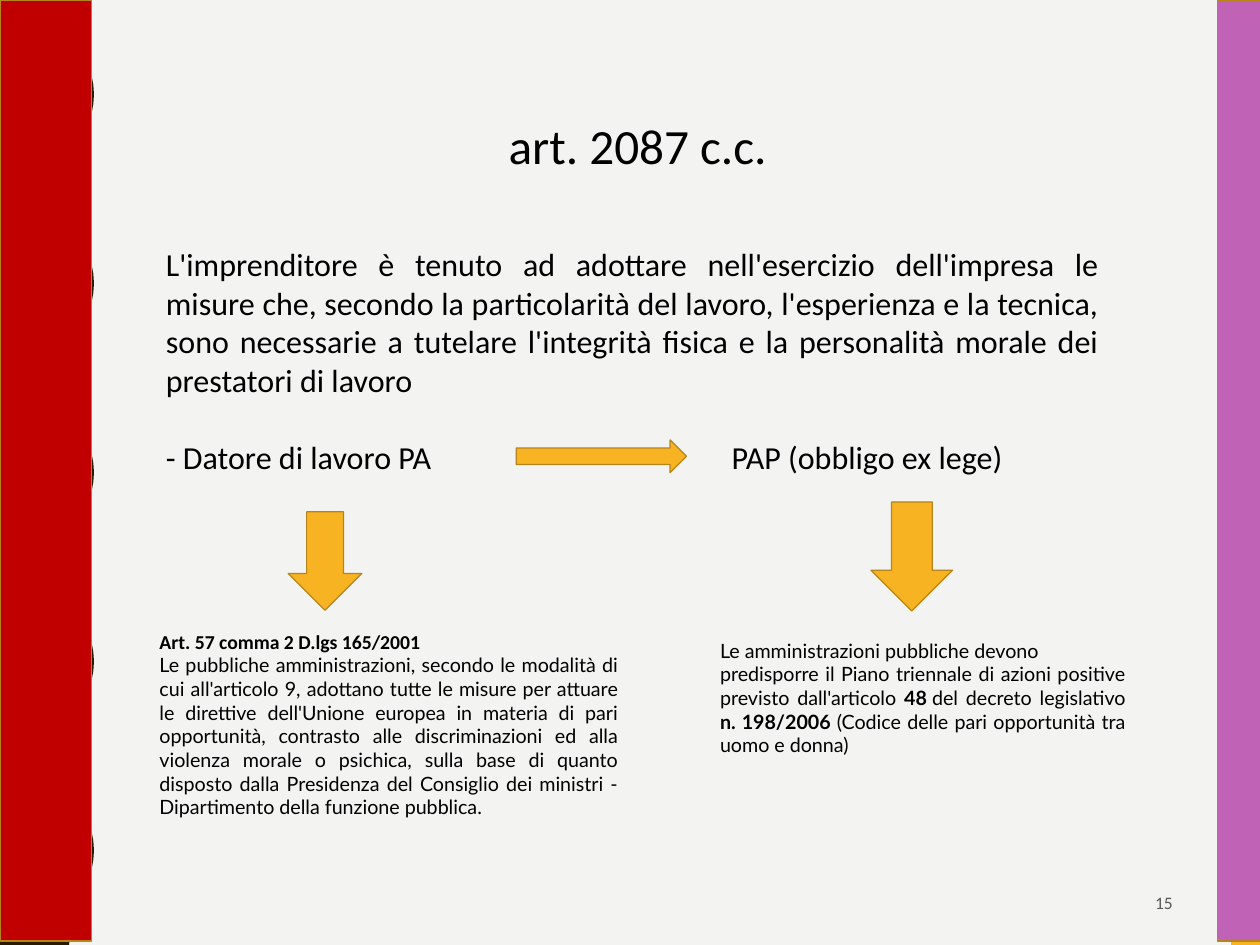
from math import cos, pi

from lxml.etree import SubElement
from pptx import Presentation
from pptx.dml.color import RGBColor
from pptx.enum.shapes import MSO_SHAPE as Shape
from pptx.enum.text import MSO_ANCHOR as Anchor, MSO_AUTO_SIZE as AutoSize, PP_ALIGN as Align
from pptx.oxml.ns import qn
from pptx.util import Inches, Pt

WIDTH = 14.206
HEIGHT = WIDTH * 3 / 4
PAPER = RGBColor(0xF3, 0xF3, 0xF2)
BLACK = RGBColor(0, 0, 0)
GREY = RGBColor(0x59, 0x59, 0x59)
DARK_BROWN = RGBColor(0x2A, 0x1A, 0x00)
AMBER = RGBColor(0xF8, 0xB3, 0x23)
OUTLINE = RGBColor(0xB7, 0x84, 0x1A)
RED = RGBColor(0xC0, 0x00, 0x00)
VIOLET = RGBColor(0xC0, 0x63, 0xB6)

FIXED_SPACE = chr(160)
TITLE_TEXT = {"name": "Calibri", "size": Pt(40)}
BODY_TEXT = {"name": "Calibri", "size": Pt(26)}
NUMBER_TEXT = {"name": "Calibri", "size": Pt(14.2)}
NOTE_TEXT = {"name": "Lato", "size": Pt(16), "bold": False}
NOTE_BOLD = {**NOTE_TEXT, "bold": True}
NOTE_HEADING = {**NOTE_BOLD, "name": "Calibri"}

ARTICLE = ("L'imprenditore è tenuto ad adottare nell'esercizio dell'impresa le misure che, "
           "secondo la particolarità del lavoro, l'esperienza e la tecnica, sono necessarie "
           "a tutelare l'integrità fisica e la personalità morale dei prestatori di lavoro")
EMPLOYER_DUTY = [
    [("Art. 57 comma 2 D.lgs 165/2001", NOTE_HEADING)],
    [("Le pubbliche amministrazioni, secondo le modalità di cui all'articolo 9, adottano "
      "tutte le misure per attuare le direttive dell'Unione europea in materia di pari "
      "opportunità, contrasto alle discriminazioni ed alla violenza morale o psichica, "
      "sulla base di quanto disposto dalla Presidenza del Consiglio dei ministri - "
      "Dipartimento della funzione pubblica.", NOTE_TEXT)],
]
PLAN_DUTY = [[
    ("Le amministrazioni pubbliche devono".replace(" ", FIXED_SPACE), NOTE_TEXT),
    (" predisporre il Piano triennale di azioni positive previsto dall'articolo ", NOTE_TEXT),
    ("48", NOTE_BOLD),
    (FIXED_SPACE + "del decreto legislativo ", NOTE_TEXT),
    ("n. 198/2006 ", NOTE_BOLD),
    ("(Codice delle pari opportunità tra uomo e donna)", NOTE_TEXT),
]]


def place(box, *area):
    box.left, box.top, box.width, box.height = map(Inches, area)


def write(box, paragraphs, align=Align.JUSTIFY, anchor=Anchor.TOP, color=BLACK):
    """Fill a box with paragraphs, each a list of (text, font format) spans."""
    frame = box.text_frame
    frame.word_wrap = True
    frame.auto_size = AutoSize.NONE
    frame.vertical_anchor = anchor
    for index, spans in enumerate(paragraphs):
        para = frame.add_paragraph() if index else frame.paragraphs[0]
        para.alignment = align
        para.space_before = Pt(0)
        for text, font_format in spans:
            span = para.add_run()
            span.text = text
            span.font.color.rgb = color
            for attribute, value in font_format.items():
                setattr(span.font, attribute, value)


def add_text(page, area, paragraphs, **options):
    box = page.shapes.add_textbox(*map(Inches, area))
    write(box, paragraphs, **options)


def paint(shape, fill, line=None):
    shape.shadow.inherit = False
    shape.fill.solid()
    shape.fill.fore_color.rgb = fill
    if line is None:
        shape.line.fill.background()
    else:
        shape.line.color.rgb = line
        shape.line.width = Pt(1)


def add_block(page, kind, area, fill=AMBER, line=OUTLINE):
    paint(page.shapes.add_shape(kind, *map(Inches, area)), fill, line)


def add_wavy_edge(page):
    """Draw the dark left strip, whose right side swings between 0.78 and 1.06."""
    steps, waves = 100, 5
    wave = [(Inches(0.92 - 0.14 * cos(2 * pi * waves * step / steps)),
             Inches(HEIGHT * step / steps)) for step in range(steps + 1)]
    builder = page.shapes.build_freeform(0, 0)
    builder.add_line_segments(wave + [(0, Inches(HEIGHT))], close=True)
    paint(builder.convert_to_shape(), DARK_BROWN)


def remove_bullet(para):
    properties = para._p.get_or_add_pPr()
    properties.set("marL", "0")
    properties.set("indent", "0")
    SubElement(properties, qn("a:buNone"))


def fill_placeholders(page):
    title, body = page.placeholders
    place(title, 3.64, 1.25, 7.1, 0.77)
    write(title, [[("art. 2087 c.c.", TITLE_TEXT)]], align=Align.CENTER)
    place(body, 1.77, 2.71, 10.73, 2.73)
    write(body, [[(ARTICLE, BODY_TEXT)], [("- Datore di lavoro PA", BODY_TEXT)]])
    for para in body.text_frame.paragraphs:
        remove_bullet(para)
    para.space_before = Pt(31.7)


def main():
    deck = Presentation()
    deck.slide_width, deck.slide_height = Inches(WIDTH), Inches(HEIGHT)
    page = deck.slides.add_slide(deck.slide_layouts[1])
    page.background.fill.solid()
    page.background.fill.fore_color.rgb = PAPER

    add_block(page, Shape.RECTANGLE, (13.88, 0, 0.33, HEIGHT), line=None)
    add_wavy_edge(page)
    add_block(page, Shape.RECTANGLE, (13.73, 0, 0.48, 10.61), VIOLET)
    add_block(page, Shape.RECTANGLE, (0, 0, 1.03, 10.61), RED)

    fill_placeholders(page)
    add_text(page, (8.15, 4.88, 4.35, 0.54), [[("PAP (obbligo ex lege)", BODY_TEXT)]])
    add_block(page, Shape.RIGHT_ARROW, (5.82, 4.96, 1.92, 0.37))
    add_block(page, Shape.DOWN_ARROW, (3.25, 5.77, 0.83, 1.11))
    add_block(page, Shape.DOWN_ARROW, (9.82, 5.66, 0.92, 1.23))
    add_text(page, (1.7, 7.05, 5.37, 2.26), EMPLOYER_DUTY)
    add_text(page, (8.02, 7.15, 4.77, 1.45), PLAN_DUTY)
    add_text(page, (10.03, 9.9, 3.29, 0.54), [[("15", NUMBER_TEXT)]],
             align=Align.RIGHT, anchor=Anchor.MIDDLE, color=GREY)
    deck.save("out.pptx")


if __name__ == "__main__":
    main()
